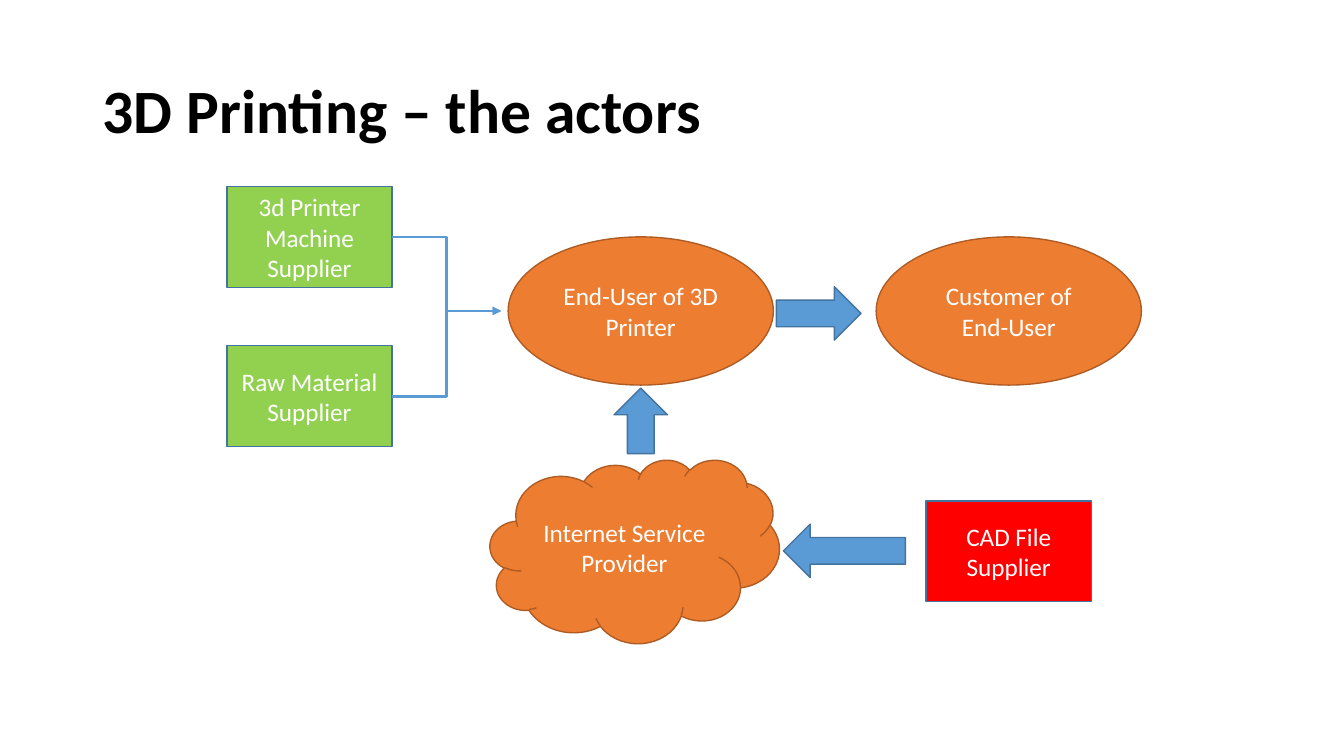
from dataclasses import dataclass

from lxml import etree
from pptx import Presentation
from pptx import util as u
from pptx.dml.color import RGBColor
from pptx.enum import shapes, text
from pptx.oxml import ns

KIND = shapes.MSO_SHAPE
RIGHT_SIDE = 3


@dataclass(frozen=True)
class Theme:
    font: str = "Calibri"
    title_size: int = 44
    label_size: int = 18
    outline: int = 1
    link_width: int = 2
    ink: str = "000000"
    label: str = "FFFFFF"
    supplier: str = "92D050"
    cad: str = "FF0000"
    actor: str = "ED7D31"
    actor_edge: str = "AF5C24"
    arrow: str = "5B9BD5"
    edge: str = "43739E"


THEME = Theme()


@dataclass(frozen=True)
class Box:
    left: float
    top: float
    width: float
    height: float

    def inner(self, left, top, width=0, height=0):
        """Return the box inside this one, given in percent of its size."""
        return Box(self.left + self.width * left / 100,
                   self.top + self.height * top / 100,
                   self.width * width / 100, self.height * height / 100)

    def lengths(self):
        return [u.Inches(n) for n in (self.left, self.top, self.width, self.height)]


def rgb(value):
    return RGBColor.from_string(value)


def style_font(font, size, color, bold=False):
    font.name, font.size, font.bold = THEME.font, u.Pt(size), bold
    font.color.rgb = rgb(color)


def add_title(slide, box, wording):
    title = slide.shapes.title
    title.left, title.top, title.width, title.height = box.lengths()
    frame = title.text_frame
    frame.text = wording
    frame.auto_size = text.MSO_AUTO_SIZE.NONE
    frame.vertical_anchor = text.MSO_ANCHOR.MIDDLE
    paragraph = frame.paragraphs[0]
    paragraph.alignment = text.PP_ALIGN.LEFT
    paragraph.line_spacing = 0.9
    style_font(paragraph.font, THEME.title_size, THEME.ink, bold=True)


def add_figure(slide, kind, box, fill, edge):
    figure = slide.shapes.add_shape(kind, *box.lengths())
    figure.shadow.inherit = False
    figure.fill.solid()
    figure.fill.fore_color.rgb = rgb(fill)
    figure.line.color.rgb = rgb(edge)
    figure.line.width = u.Pt(THEME.outline)
    return figure


def add_actor(slide, kind, box, wording, fill, edge):
    actor = add_figure(slide, kind, box, fill, edge)
    frame = actor.text_frame
    frame.word_wrap = True
    frame.vertical_anchor = text.MSO_ANCHOR.MIDDLE
    frame.text = wording
    paragraph = frame.paragraphs[0]
    paragraph.alignment = text.PP_ALIGN.CENTER
    style_font(paragraph.font, THEME.label_size, THEME.label)
    return actor


def link_supplier(slide, supplier, target):
    """Draw an elbow arrow from the supplier's right side to the target point."""
    end_x, end_y = target.lengths()[:2]
    link = slide.shapes.add_connector(shapes.MSO_CONNECTOR.ELBOW,
                                      supplier.left + supplier.width,
                                      supplier.top + supplier.height // 2, end_x, end_y)
    link.begin_connect(supplier, RIGHT_SIDE)
    link.line.color.rgb = rgb(THEME.arrow)
    link.line.width = u.Pt(THEME.link_width)
    properties = link.element.spPr
    etree.SubElement(properties.find(ns.qn("a:ln")), ns.qn("a:tailEnd"), type="triangle")
    etree.SubElement(properties, ns.qn("a:effectLst"))


def add_actor_map(slide, box):
    card_w, card_h = 18.08, 22.08
    oval_w, oval_h = 29, 32.45
    oval_top, customer_left = 11.04, 100 - oval_w
    cad_left = customer_left + (oval_w - card_w) / 2

    for top, wording in ((0, "3d Printer Machine Supplier"),
                         (34.88, "Raw Material Supplier")):
        supplier = add_actor(slide, KIND.RECTANGLE, box.inner(0, top, card_w, card_h),
                             wording, THEME.supplier, THEME.edge)
        link_supplier(slide, supplier, box.inner(30, oval_top + oval_h / 2))

    for left, wording in ((30.76, "End-User of 3D Printer"),
                          (customer_left, "Customer of End-User")):
        add_actor(slide, KIND.OVAL, box.inner(left, oval_top, oval_w, oval_h),
                  wording, THEME.actor, THEME.actor_edge)

    add_actor(slide, KIND.CLOUD, box.inner(28.78, 59.82, 31.64, 40.18),
              "Internet Service Provider", THEME.actor, THEME.actor_edge)
    add_actor(slide, KIND.RECTANGLE, box.inner(cad_left, 68.87, card_w, card_h),
              "CAD File Supplier", THEME.cad, THEME.edge)

    for kind, place in ((KIND.RIGHT_ARROW, (60.09, 21.96, 9.26, 11.7)),
                        (KIND.UP_ARROW, (42.34, 44.15, 5.84, 14.35)),
                        (KIND.LEFT_ARROW, (60.86, 73.95, 13.34, 11.7))):
        add_figure(slide, kind, box.inner(*place), THEME.arrow, THEME.edge)


def main():
    deck = Presentation()
    page = Box(0, 0, 13.33, 7.5)
    deck.slide_width, deck.slide_height = page.lengths()[2:]
    title_only = deck.slide_layouts[5]
    slide = deck.slides.add_slide(title_only)
    add_title(slide, page.inner(6.9, 5.33, 86.27, 19.33), "3D Printing – the actors")
    add_actor_map(slide, page.inner(16.88, 24.67, 68.04, 60.4))
    deck.save("out.pptx")


if __name__ == "__main__":
    main()
